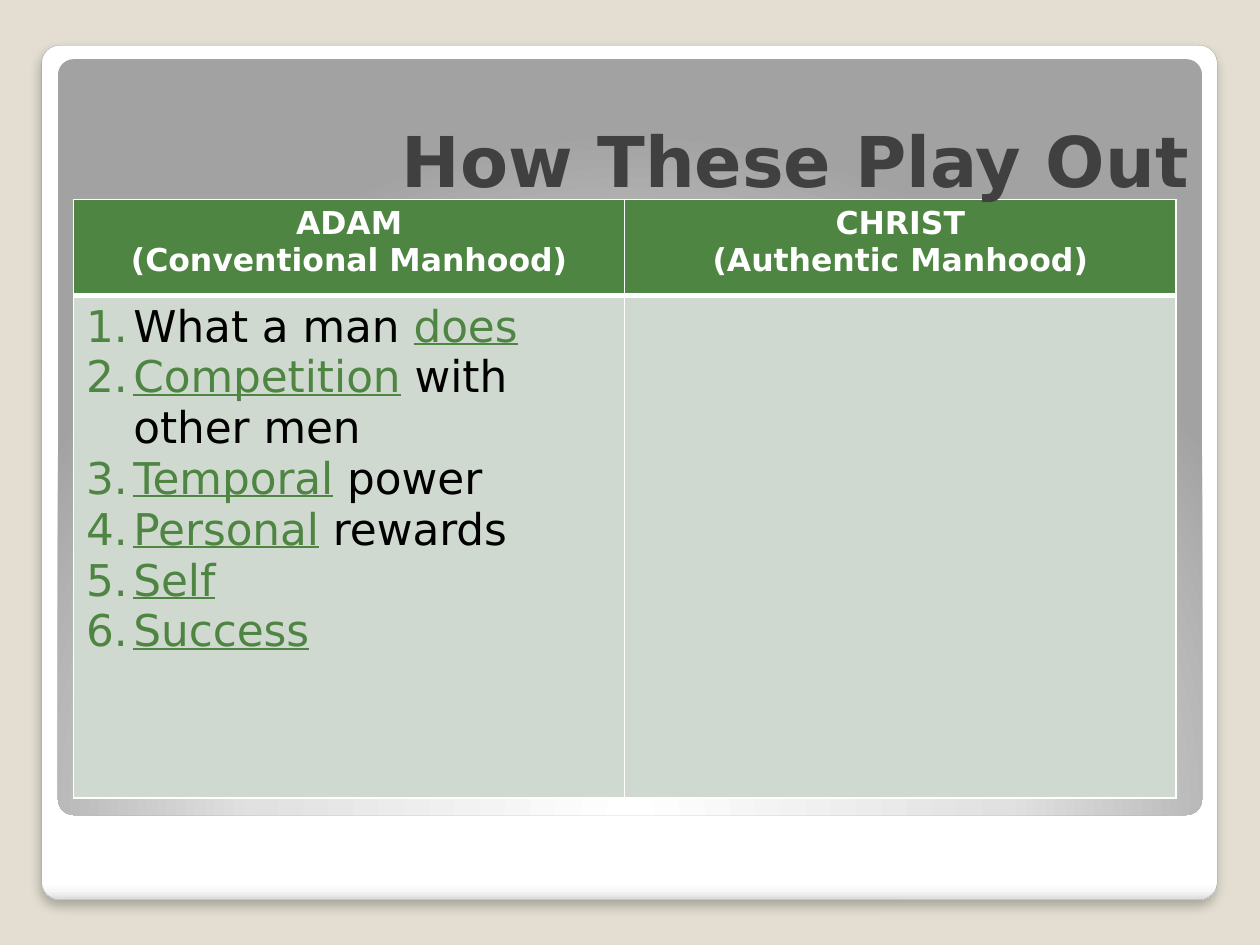
from lxml import etree
from pptx import Presentation
from pptx.dml.color import RGBColor
from pptx.enum import shapes, text
from pptx.oxml.ns import qn
from pptx.util import Pt

FONT = "DejaVu Sans"
HEX = {
    "back": "E3DED1", "white": "FFFFFF", "edge": "A4A4A4", "title": "404040",
    "green": "4E8542", "pale": "D0D9CF", "black": "000000",
}
HEADS = [("ADAM", "(Conventional Manhood)"), ("CHRIST", "(Authentic Manhood)")]
# Each item is a list of (words, is key word)
ITEMS = [
    [("What a man ", False), ("does", True)],
    [("Competition", True), (" with other men", False)],
    [("Temporal", True), (" power", False)],
    [("Personal", True), (" rewards", False)],
    [("Self", True)],
    [("Success", True)],
]


def color(name):
    return RGBColor.from_string(HEX[name])


def node(parent, tag, **attrs):
    return etree.SubElement(parent, qn("a:" + tag),
                            {key: str(val) for key, val in attrs.items()})


def add_run(para, words, size, tone, bold=False, under=False):
    run = para.add_run()
    run.text = words
    font = run.font
    font.name, font.size, font.bold = FONT, Pt(size), bold
    font.color.rgb = color(tone)
    if under:
        font.underline = True


def add_panel(slide, box, stops):
    """Round panel with a gradient; returns the shape and its gradient."""
    panel = slide.shapes.add_shape(shapes.MSO_SHAPE.ROUNDED_RECTANGLE,
                                   *map(Pt, box))
    panel.adjustments[0] = 0.021
    panel.shadow.inherit = False
    panel.line.fill.background()
    grad = etree.Element(qn("a:gradFill"), rotWithShape="1")
    panel.element.spPr.insert(2, grad)
    ramp = node(grad, "gsLst")
    for pos, tone in stops:
        node(node(ramp, "gs", pos=pos * 1000), "srgbClr", val=tone)
    return panel, grad


def add_frame(slide):
    # Outer card with a soft shadow
    card, grad = add_panel(slide, (23.8, 25.9, 671.8, 488.2), [
        (0, "FFFFFF"), (98, "FFFFFF"), (99, "F7F7F7"), (100, "DADADA")])
    node(grad, "lin", ang=90 * 60000, scaled=0)
    card.line.color.rgb = color("edge")
    card.line.width = Pt(0.16)
    glow = node(card.element.spPr.find(qn("a:effectLst")), "outerShdw",
                blurRad=Pt(6), dist=Pt(4), dir=90 * 60000, rotWithShape=0)
    node(node(glow, "srgbClr", val=HEX["black"]), "alpha", val=25000)

    # Inner panel, lit from below
    _, grad = add_panel(slide, (33.1, 33.8, 653.8, 432), [
        (0, "FFFFFF"), (55, "E1E1E1"), (100, "A2A2A2")])
    node(node(grad, "path", path="circle"), "fillToRect",
         l=50000, t=175000, r=50000, b=-75000)


def style_cell(cell, tone, top, base):
    cell.fill.solid()
    cell.fill.fore_color.rgb = color(tone)
    props = cell._tc.get_or_add_tcPr()
    for spot, (side, width) in enumerate(
            [("L", 1), ("R", 1), ("T", top), ("B", base)]):
        edge = node(props, "ln" + side, w=Pt(width))
        node(node(edge, "solidFill"), "srgbClr", val=HEX["white"])
        props.insert(spot, edge)


def add_lines(frame, count):
    """Yield the given number of paragraphs of a text frame."""
    for spot in range(count):
        yield frame.add_paragraph() if spot else frame.paragraphs[0]


def number(para):
    props = para._p.get_or_add_pPr()
    props.set("marL", str(Pt(27)))
    props.set("indent", str(Pt(-27)))
    node(node(props, "buClr"), "srgbClr", val=HEX["green"])
    node(props, "buFont", typeface="+mj-lt")
    node(props, "buAutoNum", type="arabicPeriod")


def add_grid(slide):
    grid = slide.shapes.add_table(
        2, 2, Pt(42), Pt(114), Pt(630), Pt(342)).table
    grid.rows[0].height, grid.rows[1].height = Pt(54.7), Pt(287.3)
    for col, head in enumerate(HEADS):
        cell = grid.cell(0, col)
        style_cell(cell, "green", 1, 3)
        style_cell(grid.cell(1, col), "pale", 3, 1)
        for para, words in zip(add_lines(cell.text_frame, len(head)), head):
            para.alignment = text.PP_ALIGN.CENTER
            add_run(para, words, 18, "white", bold=True)

    # Numbered list with underlined key words
    frame = grid.cell(1, 0).text_frame
    for para, item in zip(add_lines(frame, len(ITEMS)), ITEMS):
        number(para)
        for words, key in item:
            add_run(para, words, 25, "green" if key else "black", under=key)


def set_title(slide, words):
    title = slide.shapes.title
    title.left, title.top, title.width, title.height = map(
        Pt, (42, 36, 644.4, 82.8))
    frame = title.text_frame
    frame.word_wrap = True
    frame.auto_size = text.MSO_AUTO_SIZE.NONE
    frame.vertical_anchor = text.MSO_ANCHOR.BOTTOM
    para = frame.paragraphs[0]
    para.alignment = text.PP_ALIGN.RIGHT
    add_run(para, words, 40, "title", bold=True)
    # The title lies in front of the table
    slide.shapes.element.append(title.element)


def main():
    deck = Presentation()
    deck.slide_width, deck.slide_height = Pt(720), Pt(540)
    slide = deck.slides.add_slide(deck.slide_layouts[5])
    slide.background.fill.solid()
    slide.background.fill.fore_color.rgb = color("back")
    add_frame(slide)
    add_grid(slide)
    set_title(slide, "How These Play Out")
    deck.save("out.pptx")


if __name__ == "__main__":
    main()
